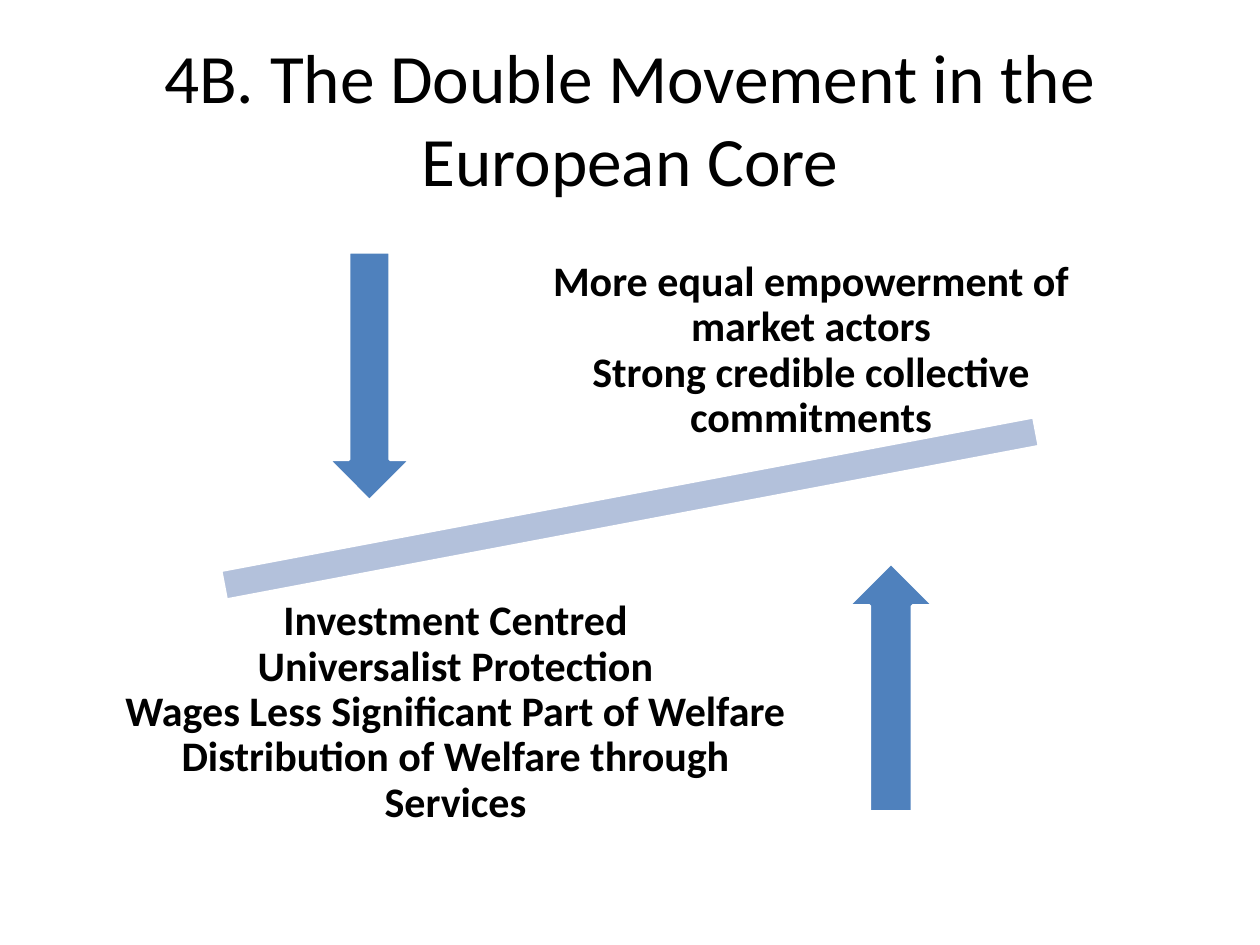
from dataclasses import dataclass

from pptx import Presentation
from pptx import util as u
from pptx.dml.color import RGBColor
from pptx.enum import shapes, text

PX_PER_INCH = 126


@dataclass(frozen=True)
class Theme:
    font: str = "Calibri"
    ink: str = "000000"
    arrow: str = "4F81BD"
    beam: str = "B3C1DB"
    outline: str = "FFFFFF"
    title_size: float = 39.6
    label_size: float = 24
    outline_width: float = 2


THEME = Theme()


def px(length):
    return u.Emu(round(length * 914400 / PX_PER_INCH))


def add_text(slide, box, content, *, size, bold=False, spacing=1.0, inset=(12, 6)):
    """Add centred text; a newline in the content becomes a line break."""
    frame = slide.shapes.add_textbox(*map(px, box)).text_frame
    frame.word_wrap = True
    frame.vertical_anchor = text.MSO_ANCHOR.MIDDLE
    frame.margin_left = frame.margin_right = px(inset[0])
    frame.margin_top = frame.margin_bottom = px(inset[1])
    paragraph = frame.paragraphs[0]
    paragraph.text = content
    paragraph.alignment = text.PP_ALIGN.CENTER
    paragraph.line_spacing = spacing
    for run in paragraph.runs:
        run.font.name = THEME.font
        run.font.size = u.Pt(size)
        run.font.bold = bold
        run.font.color.rgb = RGBColor.from_string(THEME.ink)


def add_label(slide, box, lines):
    add_text(slide, box, "\n".join(lines), size=THEME.label_size,
             bold=True, spacing=0.9, inset=(24, 24))


def add_symbol(slide, kind, box, fill, rotation=0):
    symbol = slide.shapes.add_shape(kind, *map(px, box))
    symbol.shadow.inherit = False
    symbol.rotation = rotation
    symbol.fill.solid()
    symbol.fill.fore_color.rgb = RGBColor.from_string(fill)
    symbol.line.color.rgb = RGBColor.from_string(THEME.outline)
    symbol.line.width = u.Pt(THEME.outline_width)


def main():
    deck = Presentation()
    deck.slide_width, deck.slide_height = px(1260), px(945)
    slide = deck.slides.add_slide(deck.slide_layouts[6])
    kinds = shapes.MSO_SHAPE

    # Title
    add_text(slide, (63, 38, 1134, 158),
             "4B. The Double Movement in the European Core",
             size=THEME.title_size)

    # Tilted beam between the two movements
    add_symbol(slide, kinds.MATH_MINUS, (67, 444, 1126, 129), THEME.beam, rotation=349.3)

    # Downward movement and the text above the beam
    add_symbol(slide, kinds.DOWN_ARROW, (328, 252, 83, 249), THEME.arrow)
    add_label(slide, (471, 220, 680, 262), [
        "More equal empowerment of market actors",
        "Strong credible collective commitments",
    ])

    # Upward movement and the text below the beam
    add_symbol(slide, kinds.UP_ARROW, (848, 563, 86, 249), THEME.arrow)
    add_label(slide, (94, 582, 723, 262), [
        "Investment Centred",
        "Universalist Protection",
        "Wages Less Significant Part of Welfare",
        "Distribution of Welfare through Services",
    ])

    deck.save("out.pptx")


if __name__ == "__main__":
    main()
